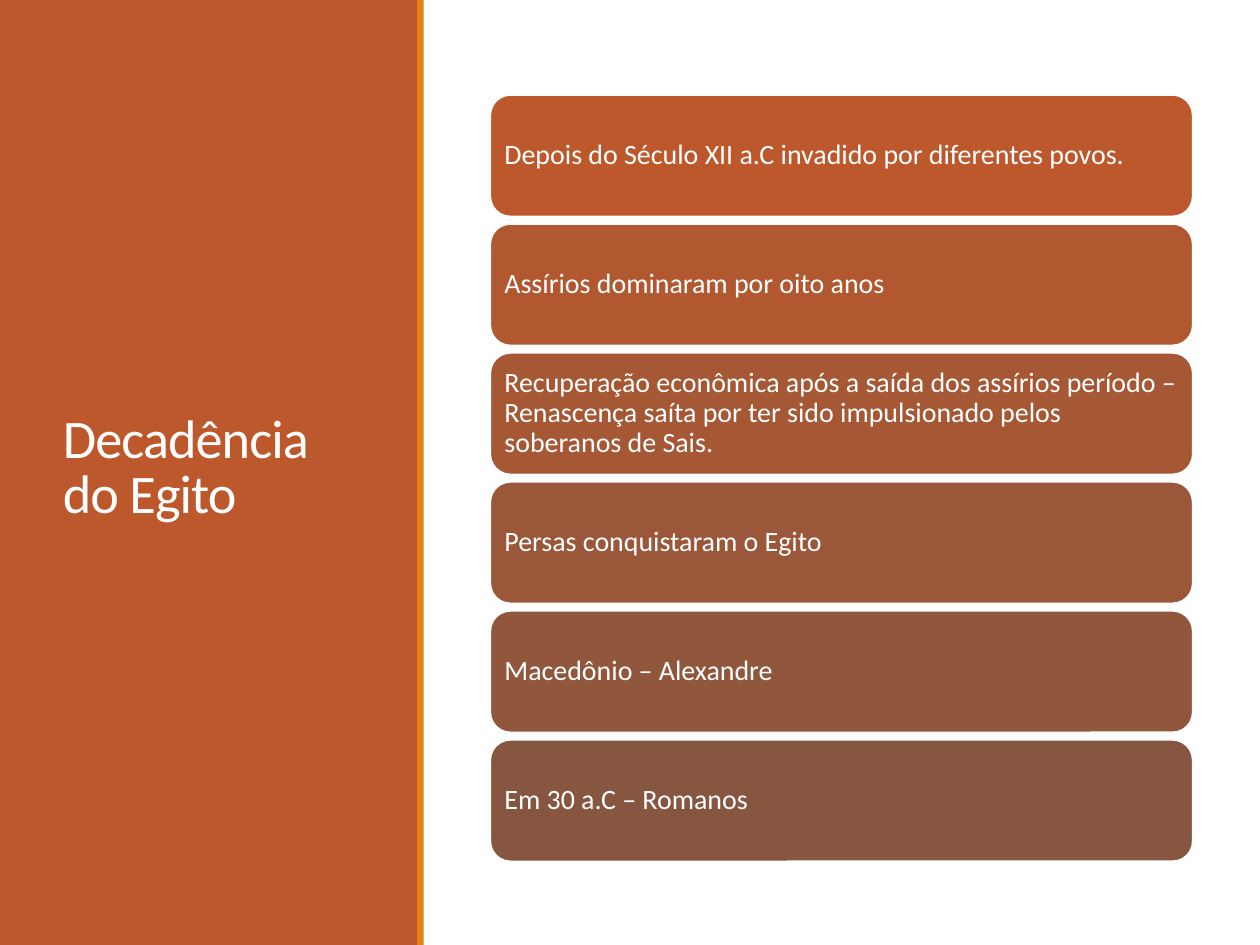
from pptx import Presentation
from pptx import util as u
from pptx.dml.color import RGBColor
from pptx.enum import shapes, text

WHITE = RGBColor(0xFF, 0xFF, 0xFF)
RUST = RGBColor(0xBD, 0x58, 0x2C)
ORANGE = RGBColor(0xE4, 0x83, 0x12)
FONT = "Calibri"

EVENTS = [
    ("Depois do Século XII a.C invadido por diferentes povos.", RUST),
    ("Assírios dominaram por oito anos", RGBColor(0xB1, 0x58, 0x31)),
    ("Recuperação econômica após a saída dos assírios período – Renascença "
     "saíta por ter sido impulsionado pelos soberanos de Sais.",
     RGBColor(0xA6, 0x58, 0x35)),
    ("Persas conquistaram o Egito", RGBColor(0x9B, 0x57, 0x39)),
    ("Macedônio – Alexandre", RGBColor(0x90, 0x57, 0x3D)),
    ("Em 30 a.C – Romanos", RGBColor(0x86, 0x56, 0x40)),
]


def add_block(kind, left, top, width, height, color):
    block = slide.shapes.add_shape(
        kind, u.Cm(left), u.Cm(top), u.Cm(width), u.Cm(height))
    block.shadow.inherit = False
    block.fill.solid()
    block.fill.fore_color.rgb = color
    block.line.fill.background()
    return block


def write(frame, words, size, spacing):
    frame.word_wrap = True
    frame.vertical_anchor = text.MSO_ANCHOR.MIDDLE
    paragraph = frame.paragraphs[0]
    paragraph.alignment = text.PP_ALIGN.LEFT
    paragraph.line_spacing = spacing
    run = paragraph.add_run()
    run.text = words
    run.font.name = FONT
    run.font.size = u.Pt(size)
    run.font.color.rgb = WHITE
    return run


prs = Presentation()
prs.slide_width, prs.slide_height = u.Cm(25.4), u.Cm(19.05)
slide = prs.slides.add_slide(prs.slide_layouts[6])

# Side panel with its accent stripe
add_block(shapes.MSO_SHAPE.RECTANGLE, 0, 0, 8.43, 19.05, RUST)
add_block(shapes.MSO_SHAPE.RECTANGLE, 8.41, 0, 0.13, 19.05, ORANGE)

# Title, with slightly tightened letters
title = slide.shapes.add_textbox(u.Cm(1.02), u.Cm(1.45), u.Cm(6.43), u.Cm(16.03))
title_run = write(title.text_frame, "Decadência do Egito", 31, 0.85)
title_run.font._element.set("spc", "-50")

# Stack of events, fading from rust to brown
first_top, step = 1.91, 2.6
for row, (event, color) in enumerate(EVENTS):
    card = add_block(shapes.MSO_SHAPE.ROUNDED_RECTANGLE,
                     9.88, first_top + row * step, 14.17, 2.46, color)
    card.line.color.rgb = WHITE
    card.line.width = u.Pt(1.25)
    frame = card.text_frame
    frame.margin_left = frame.margin_right = u.Cm(0.17)
    frame.margin_top = frame.margin_bottom = u.Cm(0.17)
    write(frame, event, 16, 0.9)

prs.save("out.pptx")
